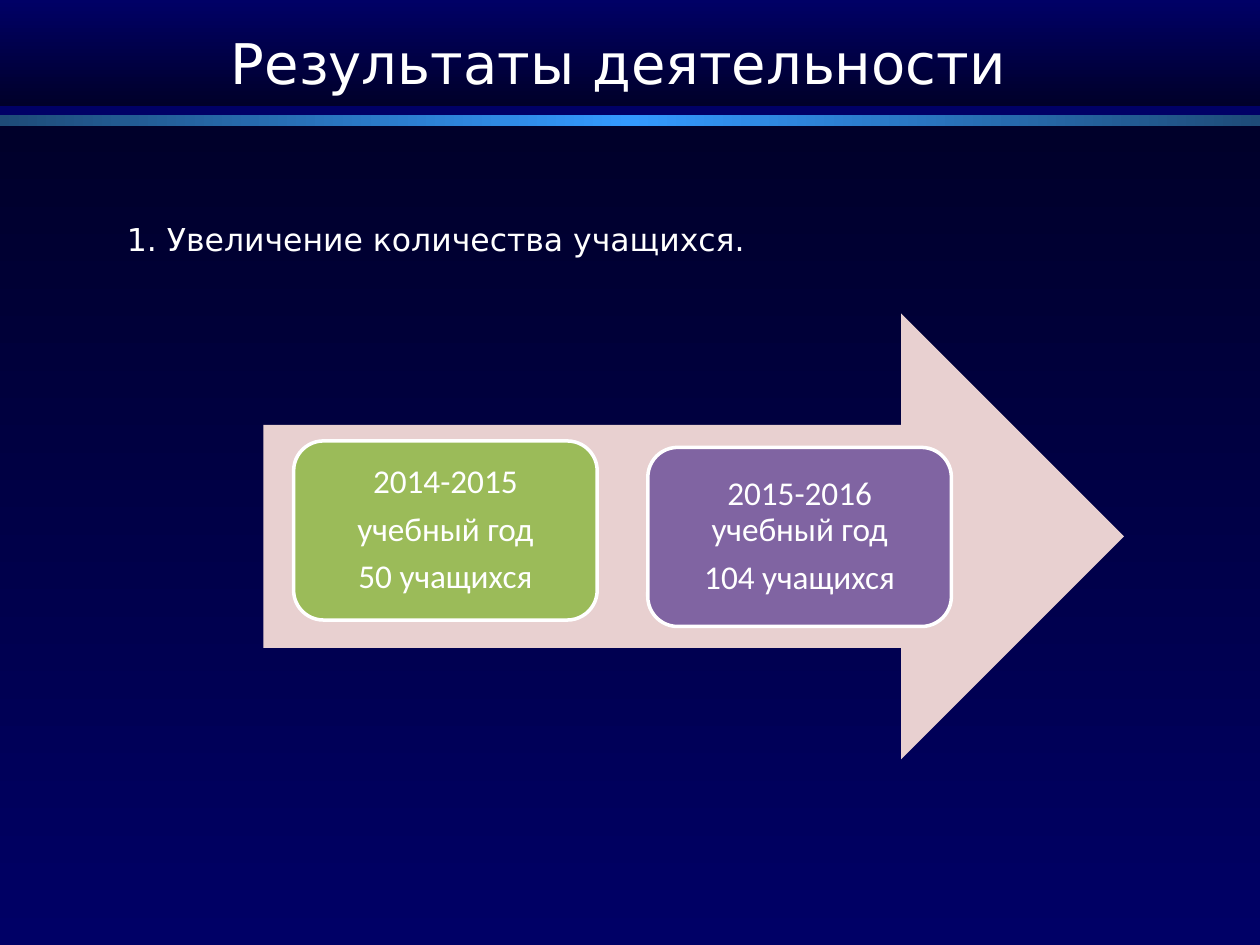
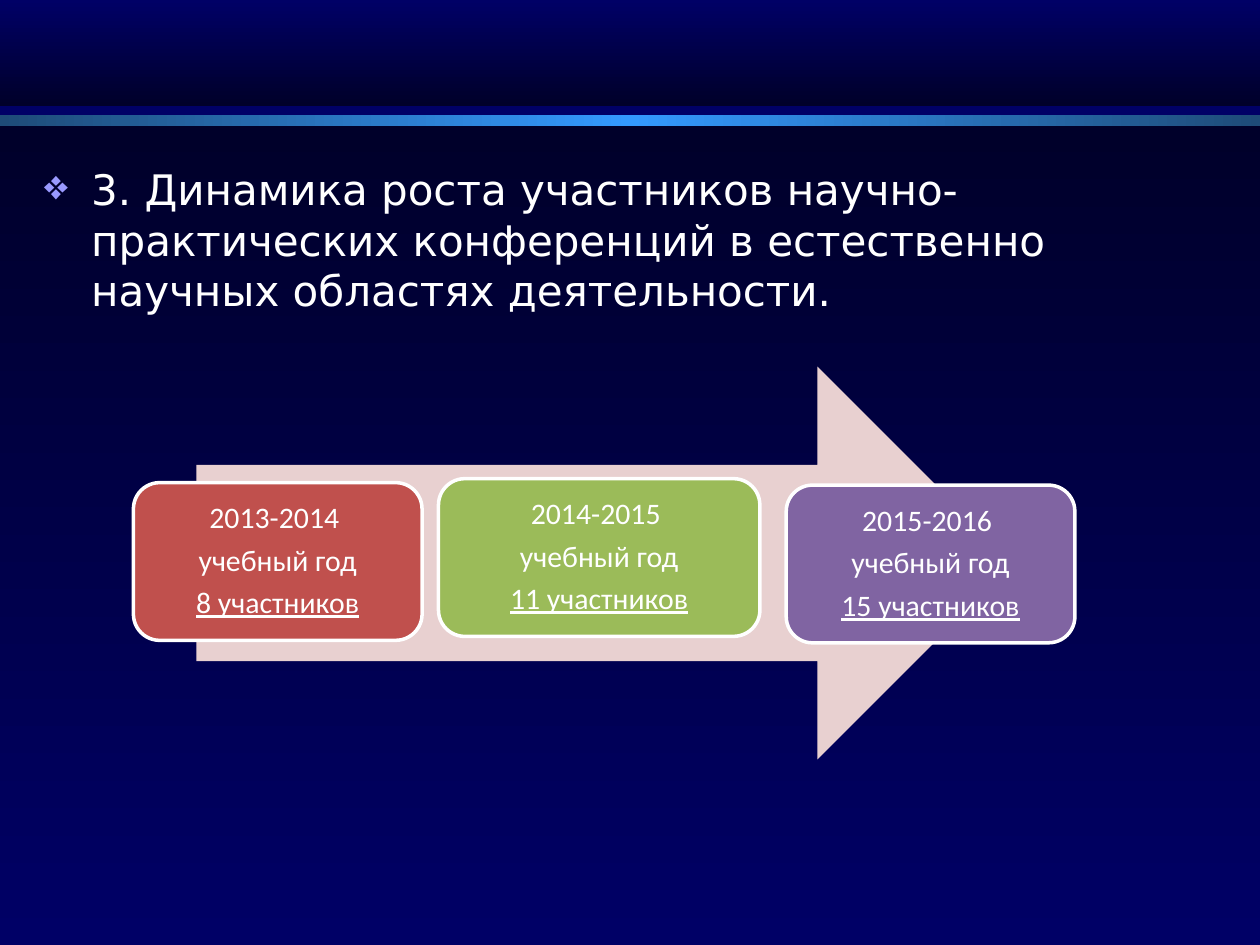
from dataclasses import dataclass
from lxml.etree import SubElement
from pptx import Presentation
from pptx.dml.color import RGBColor
from pptx.enum.shapes import MSO_SHAPE
from pptx.enum.text import MSO_ANCHOR, PP_ALIGN
from pptx.oxml.ns import qn
from pptx.util import Cm, Pt


@dataclass(frozen=True)
class Theme:
    back: str = "000066"
    deep: str = "00002A"
    stripe_edge: str = "1E4B78"
    stripe_mid: str = "3399FF"
    white: str = "FFFFFF"
    bullet: str = "9999FF"
    arrow: str = "E8D0D0"
    red: str = "C0504D"
    green: str = "9BBB59"
    purple: str = "8064A2"
    head_font: str = "DejaVu Sans"
    card_font: str = "Calibri"
    title: int = 32
    body: int = 24
    note: int = 18


T = Theme()
WIDTH, HEIGHT = 25.4, 19.05

# Bands: top, height, colours, clockwise angle
BANDS = [
    (0, 2.13, (T.back, T.deep), 90),
    (2.51, 16.54, (T.deep, T.back), 90),
    (2.32, 0.22, (T.stripe_edge, T.stripe_mid, T.stripe_edge), 0),
]

# Boxes are left, top, width, height in cm
SLIDES = [
    {
        "title": "Результаты деятельности",
        "note": "1. Увеличение количества учащихся.",
        "arrow": (5.31, 6.32, 17.35, 8.99),
        "card_height": 3.61, "card_size": 19, "card_inset": 0.2, "underline": False,
        "cards": [
            (5.92, 8.89, 6.12, T.green, ["2014-2015", "учебный год", "50 учащихся"]),
            (13.06, 9.02, 6.12, T.purple, ["2015-2016 учебный год", "104 учащихся"]),
        ],
    },
    {
        "body": "3. Динамика роста участников научно-практических конференций "
                "в естественно научных областях деятельности.",
        "arrow": (3.96, 7.39, 16.48, 7.92),
        "card_height": 3.18, "card_size": 17, "card_inset": 0.18, "underline": True,
        "cards": [
            (2.69, 9.73, 5.82, T.red, ["2013-2014 ", "учебный год", "8 участников"]),
            (8.84, 9.65, 6.48, T.green, ["2014-2015 ", "учебный год", "11 участников"]),
            (15.85, 9.78, 5.82, T.purple, ["2015-2016 ", "учебный год", "15 участников"]),
        ],
    },
]


def rgb(value):
    return RGBColor.from_string(value)


def add_run(p, text, size, font):
    r = p.add_run()
    r.text = text
    r.font.size, r.font.name = Pt(size), font
    r.font.color.rgb = rgb(T.white)
    return r


def add_shape(s, kind, box, color=None):
    sp = s.shapes.add_shape(kind, *map(Cm, box))
    sp.shadow.inherit = False
    sp.line.fill.background()
    if color:
        sp.fill.solid()
        sp.fill.fore_color.rgb = rgb(color)
    return sp


def add_text(s, box, text, size, anchor=MSO_ANCHOR.TOP):
    tf = s.shapes.add_textbox(*map(Cm, box)).text_frame
    tf.word_wrap = True
    tf.vertical_anchor = anchor
    add_run(tf.paragraphs[0], text, size, T.head_font)
    return tf.paragraphs[0]


def add_bullet(p, char, color, indent):
    pPr = p._p.get_or_add_pPr()
    pPr.set("marL", str(Cm(indent)))
    pPr.set("indent", str(-Cm(indent)))
    bu_clr = SubElement(pPr, qn("a:buClr"))
    SubElement(bu_clr, qn("a:srgbClr"), val=color)
    SubElement(pPr, qn("a:buChar"), char=char)


def add_band(s, top, height, colors, angle):
    sp = add_shape(s, MSO_SHAPE.RECTANGLE, (0, top, WIDTH, height))
    sp.fill.gradient()
    sp.fill.gradient_angle = -angle % 360
    stops = sp._element.spPr.find(qn("a:gradFill")).find(qn("a:gsLst"))
    for old in list(stops):
        stops.remove(old)
    for i, color in enumerate(colors):
        gs = SubElement(stops, qn("a:gs"), pos=str(100000 * i // (len(colors) - 1)))
        SubElement(gs, qn("a:srgbClr"), val=color)


def add_card(s, data, left, top, width, color, lines):
    box = (left, top, width, data["card_height"])
    sp = add_shape(s, MSO_SHAPE.ROUNDED_RECTANGLE, box, color)
    sp.line.color.rgb = rgb(T.white)
    sp.line.width = Pt(2)
    tf = sp.text_frame
    tf.word_wrap = True
    tf.vertical_anchor = MSO_ANCHOR.MIDDLE
    tf.margin_left = tf.margin_right = Cm(data["card_inset"])
    tf.margin_top = tf.margin_bottom = Cm(data["card_inset"])
    for i, line in enumerate(lines):
        p = tf.add_paragraph() if i else tf.paragraphs[0]
        p.alignment = PP_ALIGN.CENTER
        p.line_spacing = 0.9
        p.space_after = Pt(0.35 * data["card_size"])
        r = add_run(p, line, data["card_size"], T.card_font)
        if data["underline"] and i == len(lines) - 1:
            r.font.underline = True


def build_slide(prs, data):
    s = prs.slides.add_slide(prs.slide_layouts[6])
    s.background.fill.solid()
    s.background.fill.fore_color.rgb = rgb(T.back)
    for band in BANDS:
        add_band(s, *band)

    # Headings
    if "title" in data:
        p = add_text(s, (0.51, 0.33, 23.93, 1.85), data["title"], T.title, MSO_ANCHOR.MIDDLE)
        p.alignment = PP_ALIGN.CENTER
    if "note" in data:
        add_text(s, (2.31, 4.32, 16.21, 1.02), data["note"], T.note)
    if "body" in data:
        p = add_text(s, (0.64, 3.18, 23.93, 14.58), data["body"], T.body)
        add_bullet(p, "❖", T.bullet, 0.95)

    # Growth arrow with a card for each school year
    add_shape(s, MSO_SHAPE.RIGHT_ARROW, data["arrow"], T.arrow)
    for card in data["cards"]:
        add_card(s, data, *card)


def main():
    prs = Presentation()
    prs.slide_width, prs.slide_height = Cm(WIDTH), Cm(HEIGHT)
    for data in SLIDES:
        build_slide(prs, data)
    prs.save("out.pptx")


if __name__ == "__main__":
    main()
